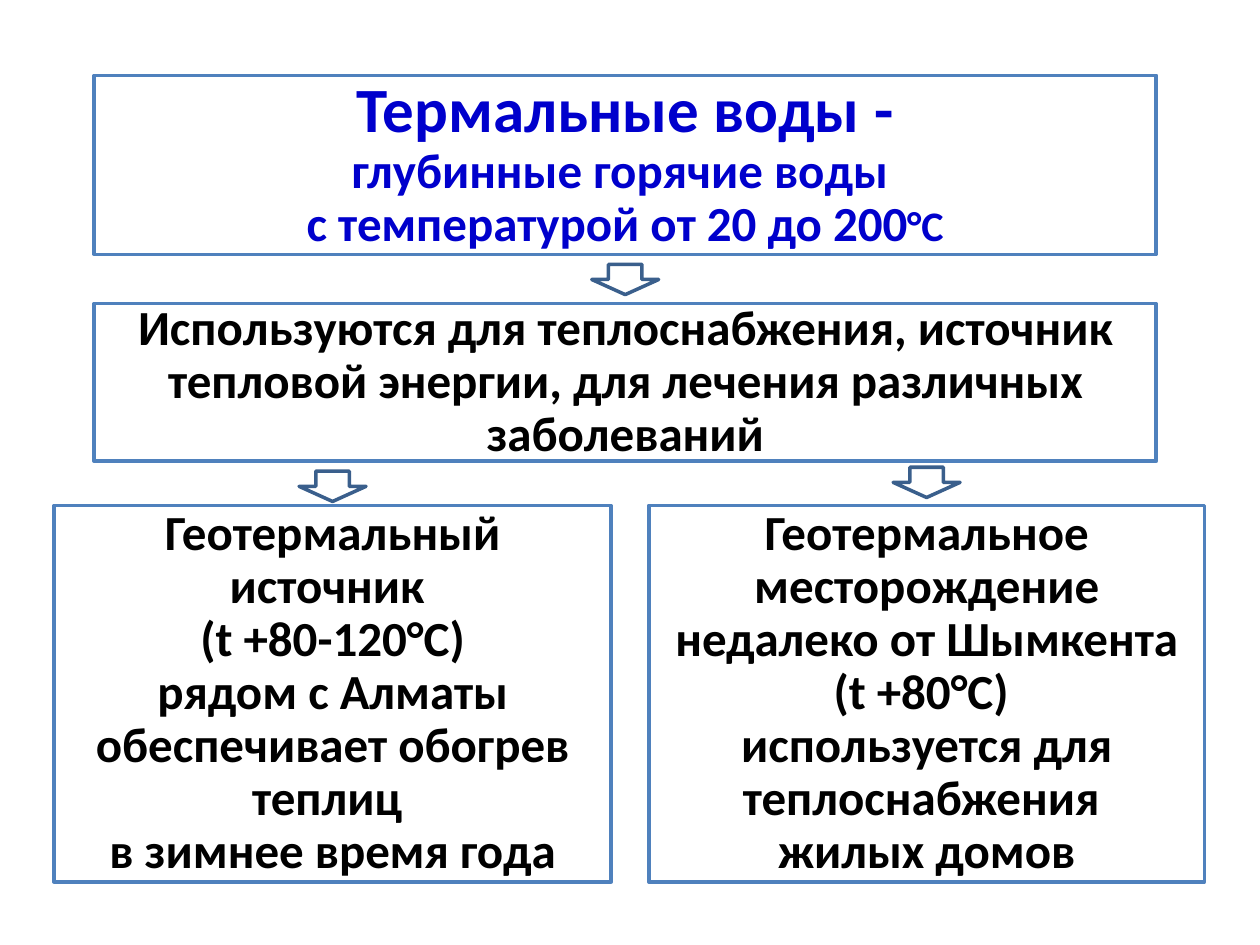
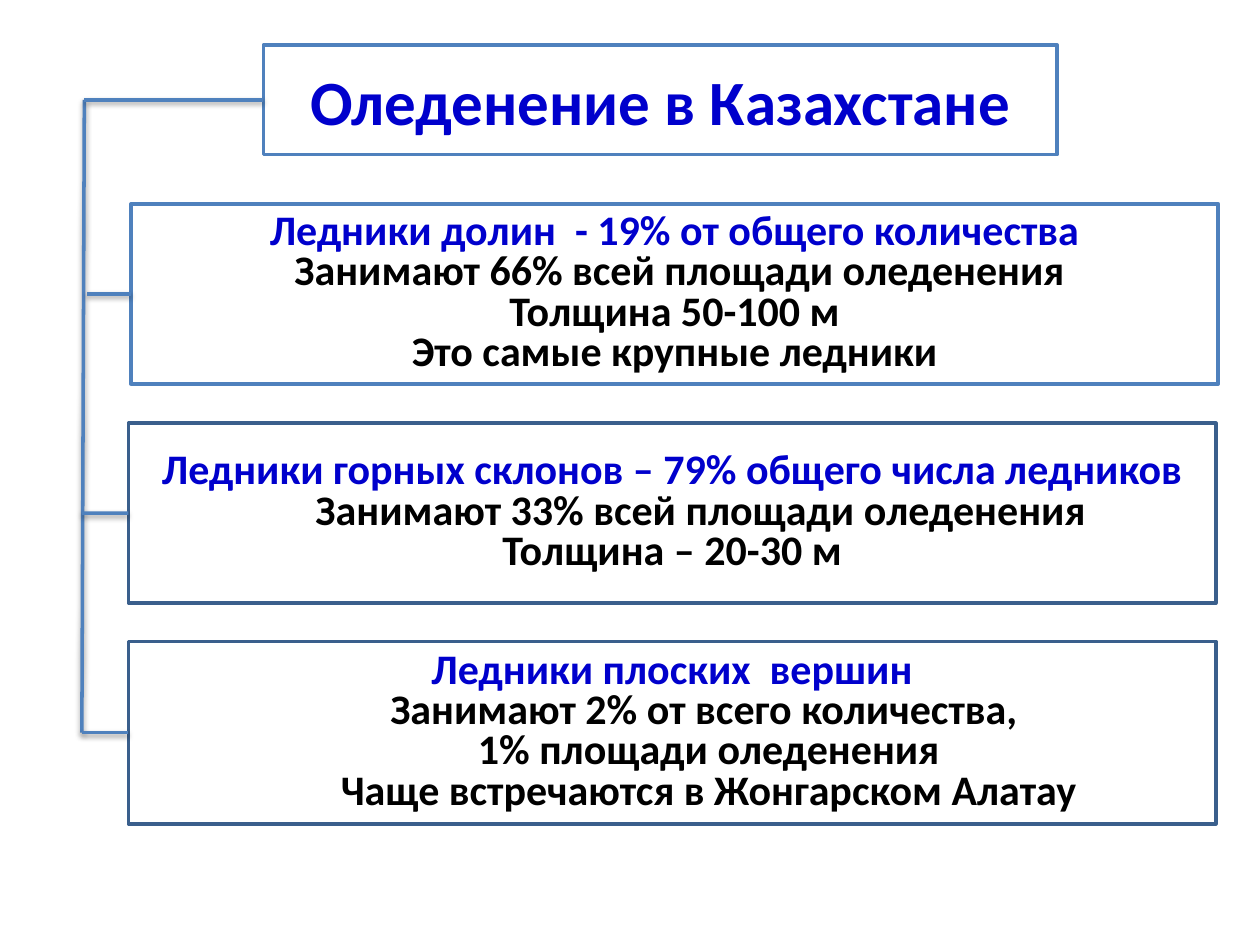
from dataclasses import dataclass
from lxml import etree
from pptx import Presentation
from pptx.dml.color import RGBColor
from pptx.enum import shapes, text
from pptx.oxml import ns
from pptx.util import Cm, Pt


@dataclass(frozen=True)
class Theme:
    font: str = "Calibri"
    blue: str = "0000CC"
    black: str = "000000"
    edge: str = "4F81BD"
    dark: str = "3A5F8C"
    stroke: float = 2
    head: int = 36
    body: int = 28
    small: int = 24


look = Theme()
RECT = shapes.MSO_SHAPE.RECTANGLE
DOWN = shapes.MSO_SHAPE.DOWN_ARROW


def add_box(slide, place, edge, lines=(), space=0.9, form=RECT):
    box = slide.shapes.add_shape(form, *[Cm(n) for n in place])
    box.shadow.inherit = False
    box.fill.background()
    box.line.color.rgb = RGBColor.from_string(edge)
    box.line.width = Pt(look.stroke)
    frame = box.text_frame
    for key, val in {"word_wrap": True, "vertical_anchor": text.MSO_ANCHOR.MIDDLE}.items():
        setattr(frame, key, val)
    for i, (indent, *runs) in enumerate(lines):
        para = frame.add_paragraph() if i else frame.paragraphs[0]
        for key, val in {"alignment": text.PP_ALIGN.CENTER, "line_spacing": space}.items():
            setattr(para, key, val)
        if indent:
            para._p.get_or_add_pPr().set("marL", str(Cm(indent)))
        for words, size, ink in runs:
            run = para.add_run()
            run.text = words
            for key, val in {"name": look.font, "size": Pt(size), "bold": True}.items():
                setattr(run.font, key, val)
            run.font.color.rgb = RGBColor.from_string(ink)
    return box


def add_line(slide, start, end, box=None):
    line = slide.shapes.add_connector(shapes.MSO_CONNECTOR.STRAIGHT, *[Cm(n) for n in (*start, *end)])
    if box is not None:
        line.begin_connect(box, 1)
    line.line.color.rgb = RGBColor.from_string(look.edge)
    line.line.width = Pt(look.stroke)
    fx = etree.SubElement(line._element.spPr, ns.qn("a:effectLst"))
    shade = etree.SubElement(fx, ns.qn("a:outerShdw"), blurRad=str(Pt(3.1)), dist=str(Pt(1.6)),
                             dir="5400000", rotWithShape="0")
    ink = etree.SubElement(shade, ns.qn("a:srgbClr"), val=look.black)
    etree.SubElement(ink, ns.qn("a:alpha"), val="38000")


deck = Presentation()
deck.slide_width, deck.slide_height = Cm(25.4), Cm(19.05)
blank = deck.slide_layouts[6]

water = deck.slides.add_slide(blank)
add_box(water, (1.9, 1.52, 21.41, 3.61), look.edge, [
    (0, ("Термальные воды -", look.head, look.blue)),
    (0, ("глубинные горячие воды ", look.body, look.blue)),
    (0, ("с температурой от 20 до 200", look.body, look.blue), ("°С", look.small, look.blue)),
])

uses = [
    ((1.9, 6.12, 21.41, 3.18), 5.33, [
        "Используются для теплоснабжения, источник тепловой энергии, для лечения различных заболеваний",
    ]),
    ((13.08, 10.19, 11.2, 7.59), 9.42, [
        "Геотермальное месторождение недалеко от Шымкента (t +80°С) ",
        "используется для теплоснабжения ",
        "жилых домов",
    ]),
    ((1.09, 10.19, 11.23, 7.59), 9.5, [
        "Геотермальный источник ",
        "(t +80-120°С)",
        "рядом с Алматы обеспечивает обогрев теплиц ",
        "в зимнее время года",
    ]),
]
wide, tall = 1.35, 0.61
for place, top, lines in uses:
    add_box(water, place, look.edge, [(0, (line, look.body, look.black)) for line in lines])
    left = place[0] + (place[2] - wide) / 2
    add_box(water, (left, top, wide, tall), look.dark, form=DOWN)

ice = deck.slides.add_slide(blank)
title = add_box(ice, (5.31, 0.91, 16, 2.21), look.edge,
                [(0, ("Оледенение в Казахстане", look.head, look.blue))], 1)

kinds = [
    ((2.64, 4.11, 21.92, 3.63), look.edge, "Ледники долин  - 19% от общего количества", [
        (0.2, "Занимают 66% всей площади оледенения"),
        (0, "Толщина 50-100 м"),
        (0, "Это самые крупные ледники"),
    ]),
    ((2.59, 8.53, 21.92, 3.63), look.dark, "Ледники горных склонов – 79% общего числа ледников", [
        (1.15, "Занимают 33% всей площади оледенения"),
        (0, "Толщина – 20-30 м"),
    ]),
    ((2.59, 12.93, 21.92, 3.68), look.dark, "Ледники плоских  вершин", [
        (1.47, "Занимают 2% от всего количества, "),
        (1.47, "1% площади оледенения"),
        (1.47, "Чаще встречаются в Жонгарском Алатау"),
    ]),
]
stem, foot = 1.7, 1.65
stops = [(title, (5.31, 0.91, 16, 2.21), stem)]
for (place, edge, name, facts), end in zip(kinds, (1.75, foot, foot)):
    lines = [(0, (name, look.small, look.blue))]
    lines += [(indent, (fact, look.small, look.black)) for indent, fact in facts]
    stops.append((add_box(ice, place, edge, lines, 0.8), place, end))

mids = [place[1] + place[3] / 2 for _, place, _ in stops]
add_line(ice, (stem, mids[0]), (foot, mids[-1]))
for (box, place, end), mid in zip(stops, mids):
    add_line(ice, (place[0], mid), (end, mid), box)

deck.save("out.pptx")
